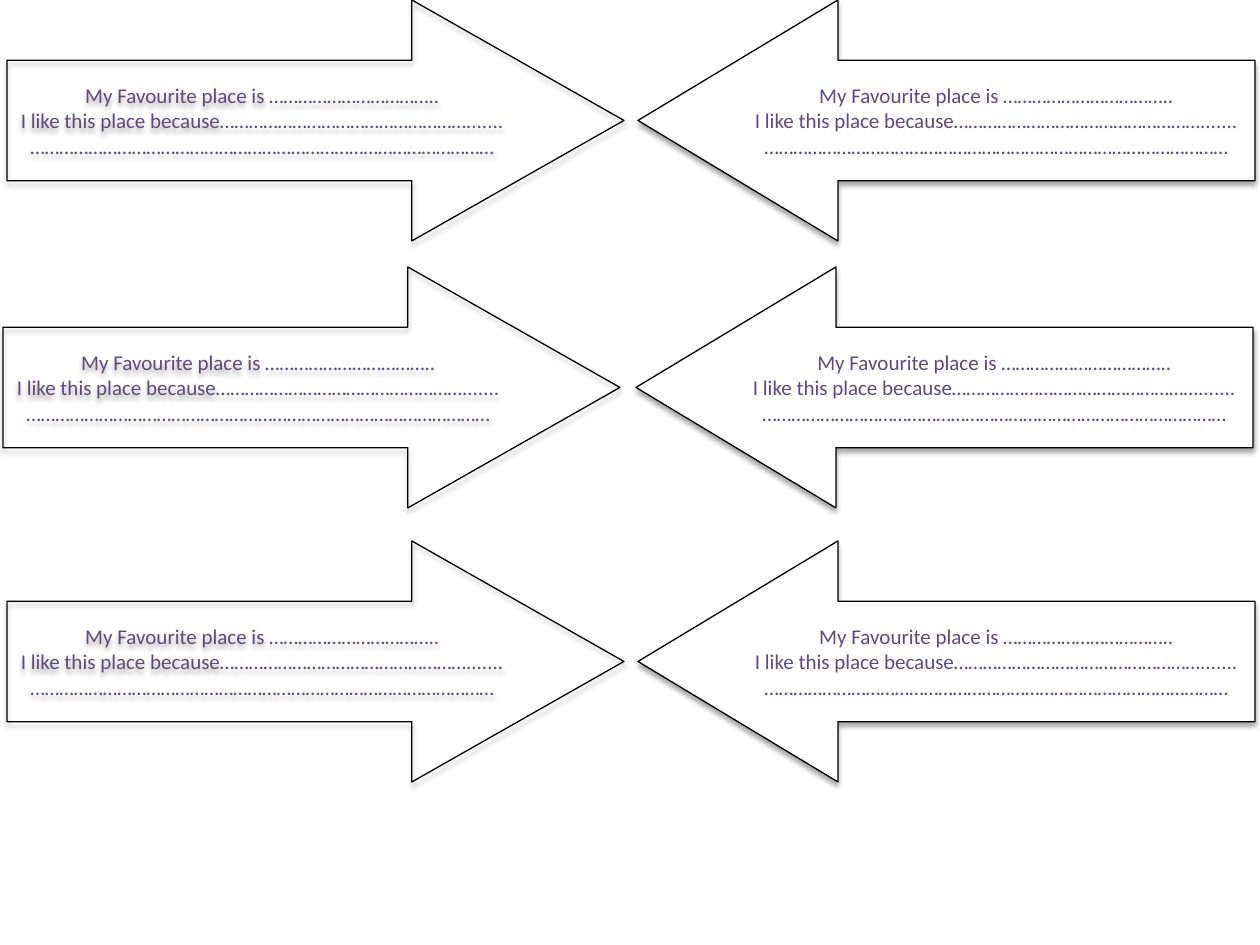
from dataclasses import dataclass

from lxml.etree import SubElement
from pptx import Presentation
from pptx.dml.color import RGBColor as RGB
from pptx.enum.shapes import MSO_SHAPE as SHAPE
from pptx.enum.text import MSO_ANCHOR as ANCHOR, PP_ALIGN as ALIGN
from pptx.oxml.ns import qn
from pptx.util import Emu, Pt

PX = 914400 // 126
ARROW_W, ARROW_H = 617, 241
ROWS = [(0, 7, 638), (267, 3, 636), (541, 7, 638)]
PROMPT = [
    "My Favourite place is ……………………………..",
    "I like this place because…………………………………………….......",
    "……………………………………………………………………………………",
]


@dataclass(frozen=True)
class Theme:
    """Colours, font and sizes of the slide."""
    text: RGB = RGB(0x60, 0x4A, 0x7B)
    line: RGB = RGB(0, 0, 0)
    fill: RGB = RGB(0xFF, 0xFF, 0xFF)
    font: str = "Calibri"
    size: float = 12
    line_width: float = 0.75


THEME = Theme()


def px(n):
    """Turn pixels into EMU."""
    return Emu(n * PX)


def add_text(tf, lines, size=THEME.size, color=THEME.text, font=THEME.font,
             align=ALIGN.CENTER, anchor=ANCHOR.MIDDLE):
    """Write one paragraph for each line."""
    tf.word_wrap = True
    tf.vertical_anchor = anchor
    for i, line in enumerate(lines):
        p = tf.add_paragraph() if i else tf.paragraphs[0]
        p.alignment = align
        r = p.add_run()
        r.text = line
        r.font.size, r.font.name = Pt(size), font
        r.font.color.rgb = color


def add_shadow(sp, blur=3.1, dist=1.8, angle=90, opacity=35):
    """Give a shape a soft outer shadow."""
    sp.shadow.inherit = False
    effects = sp._element.spPr.find(qn("a:effectLst"))
    shadow = SubElement(effects, qn("a:outerShdw"), blurRad=str(Pt(blur)),
                        dist=str(Pt(dist)), dir=str(angle * 60000), rotWithShape="0")
    color = SubElement(shadow, qn("a:srgbClr"), val=str(THEME.line))
    SubElement(color, qn("a:alpha"), val=str(opacity * 1000))


def add_arrow(s, kind, x, y, w, h, head, fill=None):
    """Place one arrow with its writing prompt in the given box."""
    sp = s.shapes.add_shape(kind, px(x), px(y), px(w), px(h))
    sp.adjustments[0], sp.adjustments[1] = 0.5, head
    if fill is None:
        sp.fill.background()
    else:
        sp.fill.solid()
        sp.fill.fore_color.rgb = fill
    sp.line.color.rgb = THEME.line
    sp.line.width = Pt(THEME.line_width)
    add_shadow(sp)
    add_text(sp.text_frame, PROMPT)


def add_arrow_pair(s, y, left, right):
    """Place a row of two arrows that point at each other."""
    add_arrow(s, SHAPE.RIGHT_ARROW, left, y, ARROW_W, ARROW_H, head=0.88)
    add_arrow(s, SHAPE.LEFT_ARROW, right, y, ARROW_W, ARROW_H, head=0.83,
              fill=THEME.fill)


def main():
    """Build the slide of arrows and save it."""
    prs = Presentation()
    prs.slide_width, prs.slide_height = px(1260), px(945)
    s = prs.slides.add_slide(prs.slide_layouts[6])
    for row in ROWS:
        add_arrow_pair(s, *row)
    prs.save("out.pptx")


if __name__ == "__main__":
    main()
